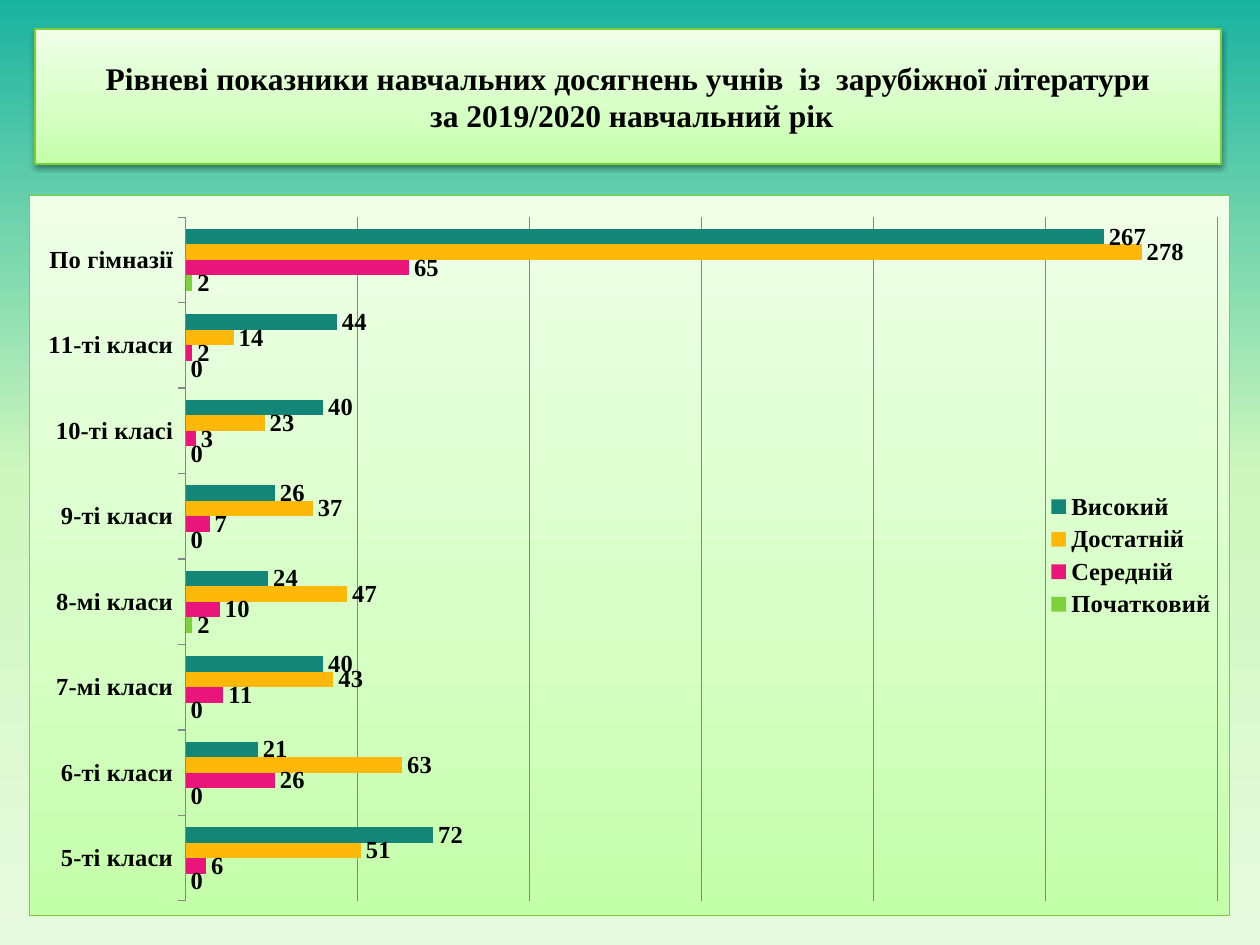
from lxml.etree import SubElement
from pptx import Presentation
from pptx.chart.data import CategoryChartData
from pptx.dml.color import RGBColor
from pptx.enum.chart import XL_CHART_TYPE, XL_LABEL_POSITION, XL_LEGEND_POSITION, XL_TICK_MARK
from pptx.enum.text import MSO_ANCHOR, PP_ALIGN
from pptx.oxml import parse_xml
from pptx.oxml.ns import nsdecls, qn
from pptx.util import Pt

PX = 914400 / 126
FONT = "Times New Roman"
COLORS = {
    "text": "000000", "border": "7CD036", "grid": "868686",
    "panel_low": "C4FFAA", "panel_mid": "D5FFC3", "panel_high": "EFFFE8",
    "sky": "1AB39F", "meadow": "CEF7BD", "ground": "E7FADF",
}
PANEL = [(0, "panel_low"), (35, "panel_mid"), (100, "panel_high")]
BACKDROP = [(0, "sky"), (50, "meadow"), (100, "ground")]
TITLE = ("Рівневі показники навчальних досягнень учнів  із  зарубіжної літератури"
         "\v за 2019/2020 навчальний рік")
CLASSES = ["5-ті класи", "6-ті класи", "7-мі класи", "8-мі класи",
           "9-ті класи", "10-ті класі", "11-ті класи", "По гімназії"]
LEVELS = [
    ("Початковий", "7FD13B", [0, 0, 0, 2, 0, 0, 0, 2]),
    ("Середній", "EA157A", [6, 26, 11, 10, 7, 3, 2, 65]),
    ("Достатній", "FEB80A", [51, 63, 43, 47, 37, 23, 14, 278]),
    ("Високий", "138677", [72, 21, 40, 24, 26, 40, 44, 267]),
]


def emu(*lengths):
    """Turn px lengths into EMU."""
    return [round(n * PX) for n in lengths]


def rgb(name):
    """Return a palette colour."""
    return RGBColor.from_string(COLORS[name])


def gradient(stops, angle):
    """Build a linear gradient fill; the angle runs clockwise in degrees."""
    gs = "".join(f'<a:gs pos="{pos * 1000}"><a:srgbClr val="{COLORS[name]}"/></a:gs>'
                 for pos, name in stops)
    return parse_xml(f'<a:gradFill {nsdecls("a")} rotWithShape="1"><a:gsLst>{gs}</a:gsLst>'
                     f'<a:lin ang="{angle * 60000}" scaled="0"/></a:gradFill>')


def set_gradient(fill, parent, stops, angle):
    """Give a fill held by the parent element a gradient of several stops."""
    fill.gradient()
    old = parent.find(qn("a:gradFill"))
    parent.replace(old, gradient(stops, angle))


def set_font(font, size=14):
    """Apply the bold black text style."""
    font.name, font.size, font.bold = FONT, Pt(size), True
    font.color.rgb = rgb("text")


def add_title(s, box):
    """Place the title on its shaded panel."""
    sp = s.shapes.title
    sp.left, sp.top, sp.width, sp.height = emu(*box)
    spPr = sp.element.spPr
    set_gradient(sp.fill, spPr, PANEL, 270)
    sp.line.color.rgb, sp.line.width = rgb("border"), Pt(0.75)
    spPr.append(parse_xml(
        f'<a:effectLst {nsdecls("a")}><a:outerShdw blurRad="{Pt(3.1)}" dist="{Pt(1.6)}" '
        'dir="5400000" rotWithShape="0"><a:srgbClr val="000000"><a:alpha val="38000"/>'
        '</a:srgbClr></a:outerShdw></a:effectLst>'))
    tf = sp.text_frame
    tf.text, tf.word_wrap, tf.vertical_anchor = TITLE, True, MSO_ANCHOR.MIDDLE
    p = tf.paragraphs[0]
    p.alignment = PP_ALIGN.CENTER
    set_font(p.font, 18)


def format_axes(chart):
    """Show class names and grid lines, and hide the value scale."""
    cat, val = chart.category_axis, chart.value_axis
    cat.major_tick_mark = XL_TICK_MARK.OUTSIDE
    set_font(cat.tick_labels.font)
    val.visible = False
    val.minimum_scale, val.maximum_scale, val.major_unit = 0, 300, 50
    val.has_major_gridlines = True
    for line in (cat.format.line, val.major_gridlines.format.line):
        line.color.rgb, line.width = rgb("grid"), Pt(0.75)


def format_series(plot):
    """Colour the bars and label them with their values."""
    plot.gap_width, plot.overlap, plot.vary_by_categories = 150, 0, False
    for series, (_, color, _) in zip(plot.series, LEVELS):
        series.format.fill.solid()
        series.format.fill.fore_color.rgb = RGBColor.from_string(color)
        series.invert_if_negative = False
        labels = series.data_labels
        labels.show_value, labels.position = True, XL_LABEL_POSITION.OUTSIDE_END
        set_font(labels.font)


def set_plot_layout(chart, x, y, w, h):
    """Fix the inner plot area as fractions of the chart."""
    area = chart.element.find(f'.//{qn("c:plotArea")}')
    for old in area.findall(qn("c:layout")):
        area.remove(old)
    layout = parse_xml(f'<c:layout {nsdecls("c")}/>')
    manual = SubElement(layout, qn("c:manualLayout"))
    settings = [("layoutTarget", "inner"), ("xMode", "edge"), ("yMode", "edge"),
                ("x", x), ("y", y), ("w", w), ("h", h)]
    for tag, value in settings:
        SubElement(manual, qn(f"c:{tag}")).set("val", str(value))
    area.insert(0, layout)


def set_chart_panel(chart):
    """Give the chart area its gradient and border."""
    spPr = parse_xml(
        f'<c:spPr {nsdecls("c", "a")}><a:ln w="{Pt(0.75)}"><a:solidFill>'
        f'<a:srgbClr val="{COLORS["border"]}"/></a:solidFill></a:ln></c:spPr>')
    spPr.insert(0, gradient(PANEL, 270))
    chart.element.find(qn("c:txPr")).addprevious(spPr)


def add_levels_chart(s, box):
    """Place the bar chart of achievement levels by class."""
    data = CategoryChartData()
    data.categories = CLASSES
    for name, _, values in LEVELS:
        data.add_series(name, values)
    chart = s.shapes.add_chart(XL_CHART_TYPE.BAR_CLUSTERED, *emu(*box), data).chart
    chart.has_title = False
    chart.font.name, chart.font.size = "Calibri", Pt(10)
    chart.font.color.rgb = rgb("text")
    format_axes(chart)
    format_series(chart.plots[0])
    chart.has_legend = True
    chart.legend.position = XL_LEGEND_POSITION.RIGHT
    chart.legend.include_in_layout = False
    set_font(chart.legend.font)
    set_plot_layout(chart, 0.13, 0.03, 0.86, 0.95)
    set_chart_panel(chart)


def main():
    """Build and save the slide."""
    prs = Presentation()
    prs.slide_width, prs.slide_height = emu(1260, 945)
    s = prs.slides.add_slide(prs.slide_layouts[0])
    subtitle = s.placeholders[1].element
    subtitle.getparent().remove(subtitle)
    fill = s.background.fill
    set_gradient(fill, s.element.find(f'.//{qn("p:bgPr")}'), BACKDROP, 90)
    add_title(s, (35, 29, 1186, 135))
    add_levels_chart(s, (29, 195, 1201, 721))
    prs.save("out.pptx")


if __name__ == "__main__":
    main()
